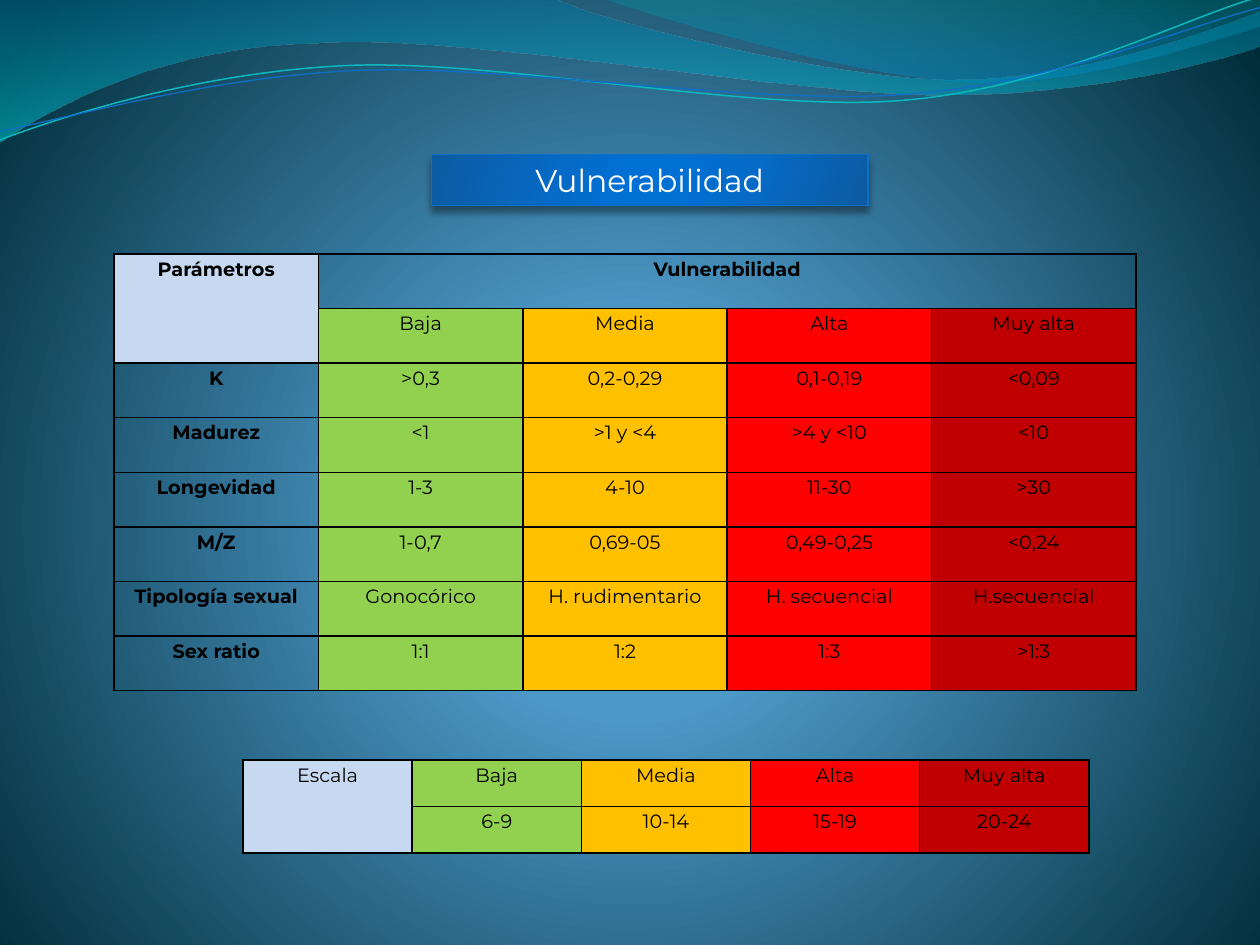
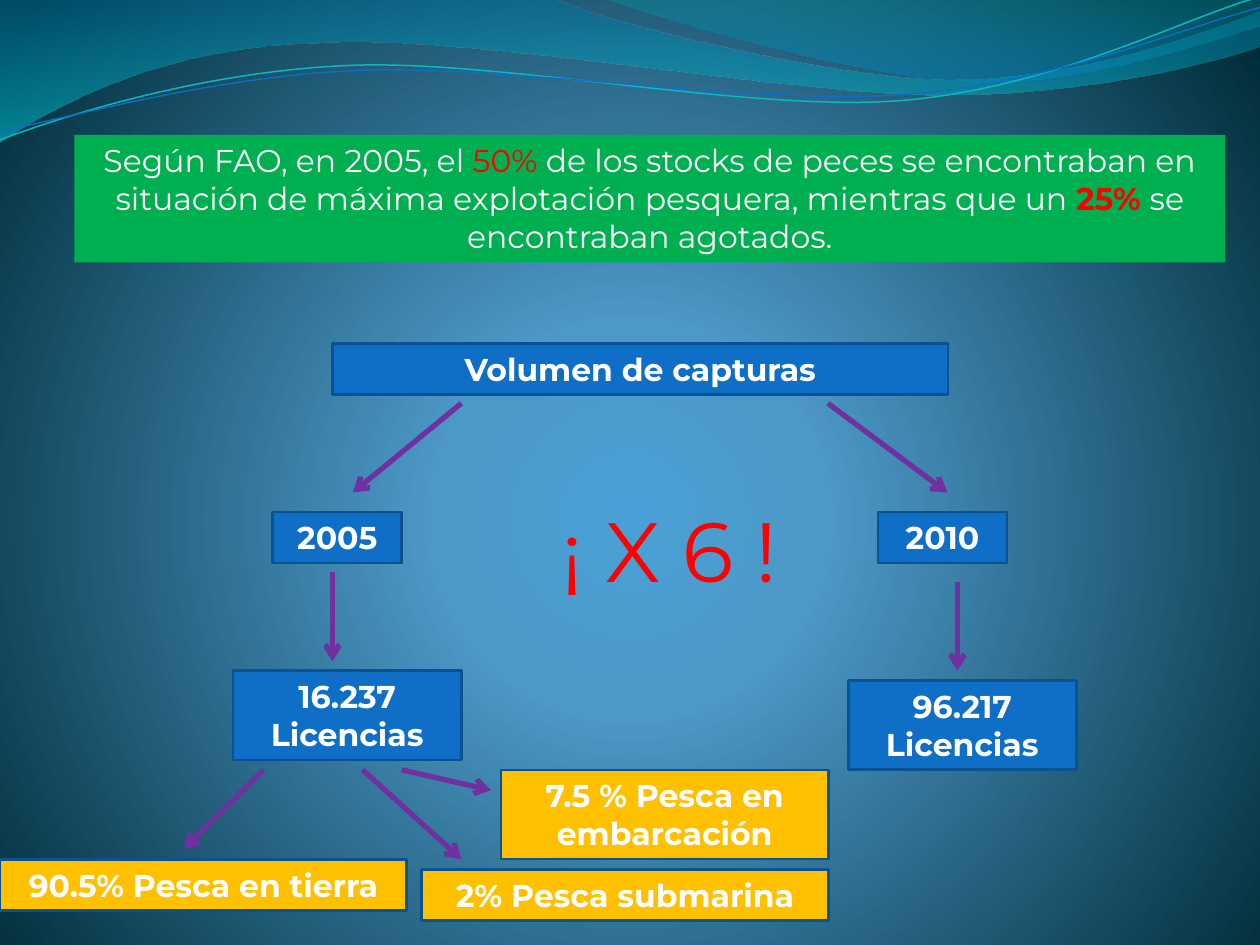
from dataclasses import dataclass

from lxml.etree import SubElement
from pptx import Presentation
from pptx.dml.color import RGBColor as Rgb
from pptx.enum.shapes import MSO_CONNECTOR as Connector, MSO_SHAPE as Preset
from pptx.enum.text import MSO_ANCHOR as Anchor, MSO_AUTO_SIZE as AutoSize, PP_ALIGN as Align
from pptx.oxml import parse_xml
from pptx.oxml.ns import nsdecls, qn
from pptx.util import Cm, Pt


@dataclass(frozen=True)
class Theme:
    font: str = "Montserrat"
    white: str = "FFFFFF"
    black: str = "000000"
    red: str = "FF0000"
    blue: str = "0F6FC6"
    blue_edge: str = "0B5292"
    teal: str = "0AB8BF"
    green: str = "00B050"
    amber: str = "FFC000"
    purple: str = "7030A0"
    header: str = "C6D9F1"
    levels: tuple = ("92D050", "FFC000", "FF0000", "C00000")
    table_size: float = 11
    body_size: float = 18
    shout_size: float = 48
    water: tuple = ((0, "4AA0D6", 100), (25, "4C98C7", 100), (100, "002C38", 100))
    plaque: tuple = (
        (0, "0C5BA2", 100), (30, "066AC6", 100), (45, "0070D5", 100),
        (55, "0070D5", 100), (73, "066AC6", 100), (100, "0C5BA2", 100),
    )
    wide_wave: tuple = ((0, "0074A1", 45), (100, "00C6CF", 55))
    right_wave: tuple = ((0, "00A1A9", 30), (80, "008BBF", 45))


THEME = Theme()
WAVE_UNIT = Cm(0.0254)
WATER_CENTRE = (
    '<a:path path="circle"><a:fillToRect l="10000" t="110000" r="10000" b="100000"/></a:path>'
)

WIDE_WAVE = [
    [(0, 0)], [(440, -1)],
    [(476, 17), (664, 63), (758, 63)], [(853, 63), (958, 26), (1000, 9)],
    [(1001, 36)],
    [(983, 44), (870, 76), (746, 75)], [(622, 75), (382, 28), (257, 34)],
    [(129, 36), (46, 83), (-1, 113)],
]
RIGHT_WAVE = [
    [(479, -1)],
    [(509, 11), (682, 62), (769, 65)], [(856, 69), (961, 32), (1000, 21)],
    [(1000, 0)],
]
TEAL_CREST = [
    [(0, 111)],
    [(48, 93), (158, 57), (277, 52)], [(395, 47), (593, 89), (713, 80)],
    [(833, 71), (938, 15), (998, -2)],
]
BLUE_CREST = [
    [(0, 104)],
    [(47, 96), (164, 61), (283, 56)], [(403, 51), (597, 84), (717, 75)],
    [(836, 67), (941, 21), (1000, 6)],
]

LEVEL_NAMES = ["Baja", "Media", "Alta", "Muy alta"]
VULNERABILITY_ROWS = [
    ["Parámetros", "Vulnerabilidad", "", "", ""],
    ["", *LEVEL_NAMES],
    ["K", ">0,3", "0,2-0,29", "0,1-0,19", "<0,09"],
    ["Madurez", "<1", ">1 y <4", ">4 y <10", "<10"],
    ["Longevidad", "1-3", "4-10", "11-30", ">30"],
    ["M/Z", "1-0,7", "0,69-05", "0,49-0,25", "<0,24"],
    ["Tipología sexual", "Gonocórico", "H. rudimentario", "H. secuencial", "H.secuencial"],
    ["Sex ratio", "1:1", "1:2", "1:3", ">1:3"],
]
SCALE_ROWS = [["Escala", *LEVEL_NAMES], ["", "6-9", "10-14", "15-19", "20-24"]]

FAO_STATEMENT = [
    ("Según FAO, en 2005, el ", THEME.white, False),
    ("50%", THEME.red, False),
    (" de los stocks de peces se encontraban en situación de máxima explotación pesquera, "
     "mientras que un ", THEME.white, False),
    ("25% ", THEME.red, True),
    ("se encontraban agotados.", THEME.white, False),
]
CATCH_BOXES = [
    ("Volumen de capturas", THEME.blue, (6.71, 6.93, 12.4, 1.03)),
    ("2005", THEME.blue, (5.5, 10.32, 2.6, 1.03)),
    ("2010", THEME.blue, (17.7, 10.32, 2.6, 1.03)),
    ("16.237 Licencias", THEME.blue, (4.7, 13.52, 4.6, 1.8)),
    ("96.217 Licencias", THEME.blue, (17.1, 13.72, 4.6, 1.8)),
    ("90.5% Pesca en tierra", THEME.amber, (0, 17.33, 8.2, 1.03)),
    ("2% Pesca submarina", THEME.amber, (8.5, 17.53, 8.2, 1.03)),
    ("7.5 % Pesca en embarcación", THEME.amber, (10.1, 15.52, 6.6, 1.8)),
]
CATCH_ARROWS = [
    (9.3, 8.13, 7.11, 9.93), (16.69, 8.13, 19.1, 9.93),
    (6.7, 11.53, 6.7, 13.33), (19.3, 11.73, 19.3, 13.52),
    (5.31, 15.52, 3.7, 17.12), (7.31, 15.52, 9.3, 17.32), (8.1, 15.52, 9.9, 15.93),
]


def apply_format(target, values):
    for attribute, value in values.items():
        setattr(target, attribute, value)


def place(shape, box):
    apply_format(shape, dict(zip(("left", "top", "width", "height"), map(Cm, box))))


def paint(fill, color):
    fill.solid()
    fill.fore_color.rgb = Rgb.from_string(color)


def outline(line, color, width):
    paint(line.fill, color)
    line.width = Pt(width)


def linear(degrees):
    return f'<a:lin ang="{degrees * 60000}" scaled="0"/>'


def paint_gradient(fill, properties, stops, direction):
    fill.solid()
    marks = "".join(
        f'<a:gs pos="{position * 1000}"><a:srgbClr val="{color}">'
        f'<a:alpha val="{opacity * 1000}"/></a:srgbClr></a:gs>'
        for position, color, opacity in stops
    )
    gradient = parse_xml(
        f'<a:gradFill {nsdecls("a")} rotWithShape="1"><a:gsLst>{marks}</a:gsLst>'
        f'{direction}</a:gradFill>'
    )
    properties.replace(properties.find(qn("a:solidFill")), gradient)


def write(frame, runs, size, line_spacing=None):
    paragraph = frame.paragraphs[0]
    apply_format(paragraph, {"alignment": Align.CENTER, "line_spacing": line_spacing})
    for words, color, bold in runs:
        run = paragraph.add_run()
        run.text = words
        apply_format(run.font, {"name": THEME.font, "size": Pt(size), "bold": bold})
        run.font.color.rgb = Rgb.from_string(color)


def fill_frame(frame, runs, size, auto_size=AutoSize.SHAPE_TO_FIT_TEXT):
    apply_format(frame, {
        "word_wrap": True, "auto_size": auto_size, "vertical_anchor": Anchor.TOP,
    })
    write(frame, runs, size)


def bend(wave, segments):
    sides = iter(wave.element.xpath(".//a:path/a:lnTo"))
    for segment in segments[1:]:
        group = [next(sides) for _ in segment]
        if len(group) == 3:
            curve = parse_xml(f'<a:cubicBezTo {nsdecls("a")}/>')
            group[0].addprevious(curve)
            for side in group:
                curve.append(side[0])
                side.getparent().remove(side)


def draw_wave(slide, segments, closed):
    points = [(x * WAVE_UNIT, y * WAVE_UNIT) for segment in segments for x, y in segment]
    builder = slide.shapes.build_freeform(*points[0])
    builder.add_line_segments(points[1:], close=closed)
    wave = builder.convert_to_shape()
    bend(wave, segments)
    wave.shadow.inherit = False
    return wave


def dress_master(master, slide):
    background = master.background.fill
    background.solid()
    paint_gradient(background, master.element.xpath(".//p:bgPr")[0], THEME.water, WATER_CENTRE)
    waves = []
    for segments, stops in ((WIDE_WAVE, THEME.wide_wave), (RIGHT_WAVE, THEME.right_wave)):
        wave = draw_wave(slide, segments, True)
        paint_gradient(wave.fill, wave.element.spPr, stops, linear(90))
        wave.line.fill.background()
        waves.append(wave)
    for segments, color, width in ((TEAL_CREST, THEME.teal, 0.85), (BLUE_CREST, THEME.blue, 0.75)):
        crest = draw_wave(slide, segments, False)
        crest.fill.background()
        outline(crest.line, color, width)
        waves.append(crest)
    for index, wave in enumerate(waves):
        wave.element.nvSpPr.cNvPr.id = 20 + index
        master.shapes.element.insert(2 + index, wave.element)


def add_title(slide, runs, box):
    title = slide.shapes.title
    place(title, box)
    fill_frame(title.text_frame, runs, THEME.body_size, AutoSize.NONE)
    title.shadow.inherit = False
    return title


def cast_shadow(shape):
    effects = shape.element.spPr.find(qn("a:effectLst"))
    shadow = SubElement(effects, qn("a:outerShdw"), blurRad=str(Pt(4)), dist=str(Pt(3.4)),
                        dir="5400000", algn="t", rotWithShape="0")
    color = SubElement(shadow, qn("a:srgbClr"), val=THEME.black)
    SubElement(color, qn("a:alpha"), val="40000")


def add_borders(cell):
    properties = cell._tc.get_or_add_tcPr()
    for index, side in enumerate(("lnL", "lnR", "lnT", "lnB")):
        properties.insert(index, parse_xml(
            f'<a:{side} {nsdecls("a")} w="{Pt(1)}"><a:solidFill>'
            f'<a:srgbClr val="{THEME.black}"/></a:solidFill></a:{side}>'
        ))


def add_level_table(slide, rows, corner, column_width, row_height, is_bold, is_clear):
    size = (column_width * len(rows[0]), row_height * len(rows))
    table = slide.shapes.add_table(len(rows), len(rows[0]), *map(Cm, corner + size)).table
    apply_format(table, {"first_row": False, "horz_banding": False})
    for column in table.columns:
        column.width = Cm(column_width)
    colors = (THEME.header, *THEME.levels)
    for r, row in enumerate(rows):
        table.rows[r].height = Cm(row_height)
        for c, words in enumerate(row):
            cell = table.cell(r, c)
            apply_format(cell, {
                "margin_left": Cm(0.18), "margin_right": Cm(0.18),
                "margin_top": 0, "margin_bottom": 0,
            })
            if is_clear(r, c):
                cell.fill.background()
            else:
                paint(cell.fill, colors[c])
            add_borders(cell)
            if words:
                write(cell.text_frame, [(words, THEME.black, is_bold(r, c))],
                      THEME.table_size, 1.15)
    table.cell(0, 0).merge(table.cell(1, 0))
    return table


def add_catch_box(slide, words, color, box):
    catch = slide.shapes.add_shape(Preset.RECTANGLE, *map(Cm, box))
    catch.shadow.inherit = False
    paint(catch.fill, color)
    outline(catch.line, THEME.blue_edge, 1.5)
    fill_frame(catch.text_frame, [(words, THEME.white, True)], THEME.body_size)


def add_arrow(slide, ends):
    arrow = slide.shapes.add_connector(Connector.STRAIGHT, *map(Cm, ends))
    outline(arrow.line, THEME.purple, 3)
    properties = arrow.element.spPr
    SubElement(properties.find(qn("a:ln")), qn("a:tailEnd"), type="arrow")
    SubElement(properties, qn("a:effectLst"))


def build_vulnerability(slide):
    title = add_title(slide, [("Vulnerabilidad", THEME.white, False)], (8.7, 3.12, 8.8, 1.03))
    paint_gradient(title.fill, title.element.spPr, THEME.plaque, linear(16))
    outline(title.line, THEME.blue, 0.75)
    cast_shadow(title)
    parameters = add_level_table(
        slide, VULNERABILITY_ROWS, (2.3, 5.12), 4.12, 1.1,
        is_bold=lambda r, c: r == 0 or c == 0,
        is_clear=lambda r, c: (r == 0 and c > 0) or (r > 1 and c == 0),
    )
    parameters.cell(0, 1).merge(parameters.cell(0, 4))
    add_level_table(
        slide, SCALE_ROWS, (4.9, 15.32), 3.41, 0.94,
        is_bold=lambda r, c: False, is_clear=lambda r, c: False,
    )


def build_catches(slide):
    statement = add_title(slide, FAO_STATEMENT, (1.5, 2.72, 23.2, 2.57))
    paint(statement.fill, THEME.green)
    for words, color, box in CATCH_BOXES:
        add_catch_box(slide, words, color, box)
    for ends in CATCH_ARROWS:
        add_arrow(slide, ends)
    growth = slide.shapes.add_textbox(*map(Cm, (10.1, 9.93, 6.8, 2.31)))
    fill_frame(growth.text_frame, [("¡ X 6 !", THEME.red, False)], THEME.shout_size)


def main():
    deck = Presentation()
    apply_format(deck, {"slide_width": Cm(25.4), "slide_height": Cm(19.05)})
    title_only = deck.slide_layouts[5]
    vulnerability, catches = (deck.slides.add_slide(title_only) for _ in range(2))
    dress_master(deck.slide_master, vulnerability)
    build_vulnerability(vulnerability)
    build_catches(catches)
    deck.save("out.pptx")


if __name__ == "__main__":
    main()
